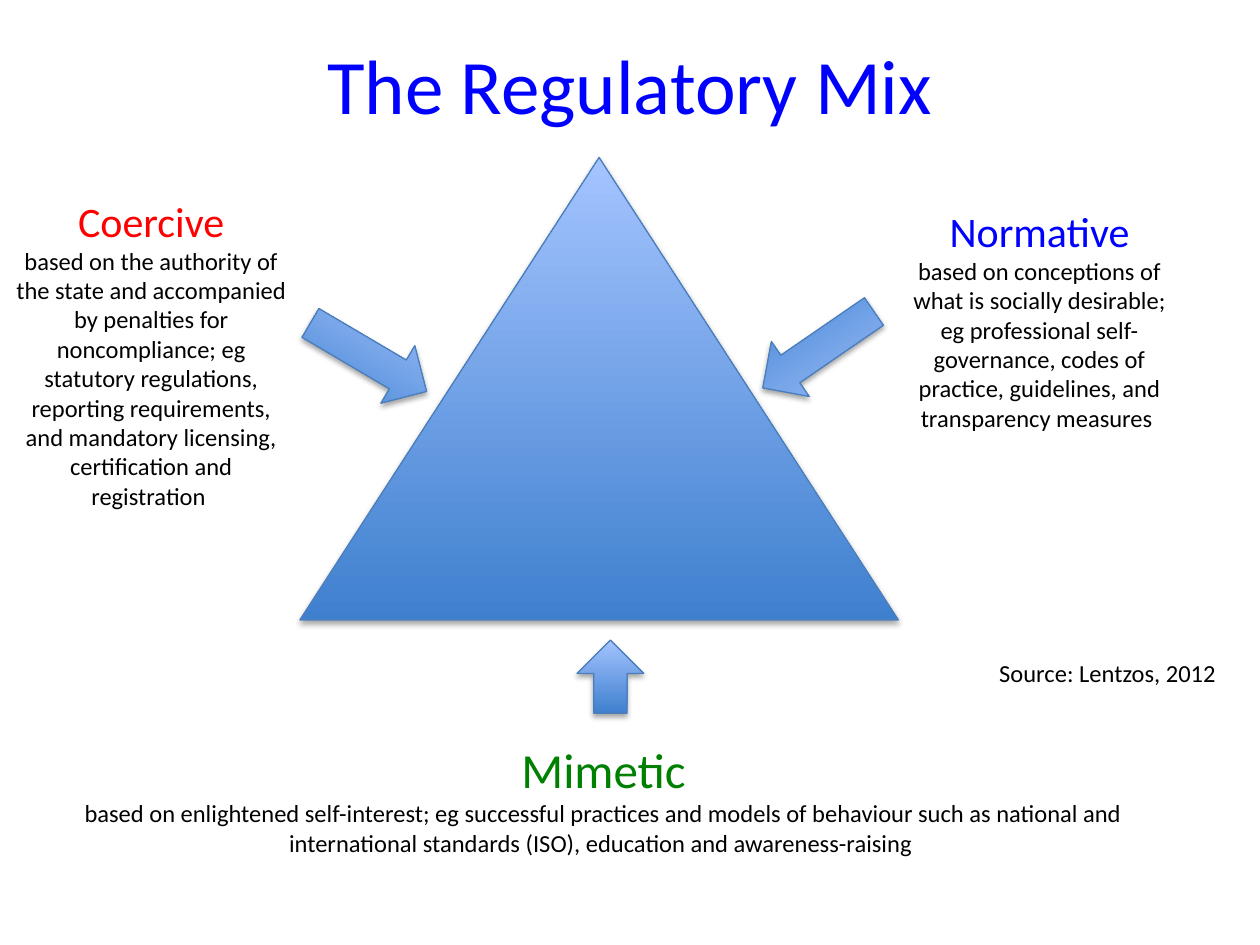
from dataclasses import dataclass

from lxml import etree
from pptx import Presentation
from pptx import util as u
from pptx.dml.color import RGBColor
from pptx.enum import shapes, text
from pptx.oxml.ns import qn

FONT = "Calibri"
BLACK = "000000"
BLUE = "0000FF"


@dataclass(frozen=True)
class Box:
    left: float
    top: float
    width: float
    height: float

    def lengths(self) -> list:
        return [u.Inches(n) for n in (self.left, self.top, self.width, self.height)]


@dataclass(frozen=True)
class Line:
    wording: str
    size: float = 14
    color: str = BLACK


@dataclass(frozen=True)
class Caption:
    box: Box
    lines: tuple[Line, ...]
    anchor: text.MSO_ANCHOR = text.MSO_ANCHOR.TOP


@dataclass(frozen=True)
class Block:
    preset: shapes.MSO_SHAPE
    box: Box
    rotation: float = 0


BLOCKS = (
    Block(shapes.MSO_SHAPE.ISOSCELES_TRIANGLE, Box(2.38, 1.25, 4.75, 3.67)),
    Block(shapes.MSO_SHAPE.RIGHT_ARROW, Box(2.39, 2.57, 1.07, 0.53), 30.5),
    Block(shapes.MSO_SHAPE.RIGHT_ARROW, Box(5.96, 2.51, 1.07, 0.53), 145.5),
    Block(shapes.MSO_SHAPE.UP_ARROW, Box(4.58, 5.08, 0.53, 0.58)),
)

CAPTIONS = (
    Caption(
        Box(0.5, 0.04, 9, 1.25),
        (Line("The Regulatory Mix", 44, BLUE),),
        text.MSO_ANCHOR.MIDDLE,
    ),
    Caption(
        Box(-0.01, 1.5, 2.42, 2.86),
        (
            Line("Coercive", 24, "FF0000"),
            Line(
                "based on the authority of the state and accompanied by penalties "
                "for noncompliance; eg statutory regulations, reporting requirements, "
                "and mandatory licensing, certification and registration "
            ),
        ),
    ),
    Caption(
        Box(0.5, 5.82, 8.58, 1.04),
        (
            Line("Mimetic", 28, "008000"),
            Line(
                "based on enlightened self-interest; eg successful practices and "
                "models of behaviour such as national and international standards "
                "(ISO), education and awareness-raising "
            ),
        ),
    ),
    Caption(
        Box(7.04, 1.58, 2.42, 1.92),
        (
            Line("Normative", 24, BLUE),
            Line(
                "based on conceptions of what is socially desirable; eg professional "
                "self-governance, codes of practice, guidelines, and transparency "
                "measures "
            ),
        ),
    ),
    Caption(Box(7.58, 5.17, 2.42, 0.34), (Line("Source: Lentzos, 2012"),)),
)


def rgb(code: str) -> RGBColor:
    return RGBColor.from_string(code)


def add_shadow(shape) -> None:
    shape.shadow.inherit = False
    effects = shape._element.spPr.find(qn("a:effectLst"))
    shadow = etree.SubElement(
        effects,
        qn("a:outerShdw"),
        blurRad=str(u.Pt(3.1)),
        dist=str(u.Pt(1.8)),
        dir="5400000",
        rotWithShape="0",
    )
    color = etree.SubElement(shadow, qn("a:srgbClr"), val=BLACK)
    etree.SubElement(color, qn("a:alpha"), val="35000")


def draw_block(slide, block: Block) -> None:
    shape = slide.shapes.add_shape(block.preset, *block.box.lengths())
    shape.rotation = block.rotation
    shape.fill.gradient()
    shape.fill.gradient_angle = 90
    for stop, position, code in zip(
        shape.fill.gradient_stops, (0, 1), ("3F80CE", "A4C4FF")
    ):
        stop.position = position
        stop.color.rgb = rgb(code)
    shape.line.color.rgb = rgb("4B7EBC")
    shape.line.width = u.Pt(0.75)
    add_shadow(shape)


def draw_caption(slide, caption: Caption) -> None:
    frame = slide.shapes.add_textbox(*caption.box.lengths()).text_frame
    frame.word_wrap = True
    frame.vertical_anchor = caption.anchor
    for index, line in enumerate(caption.lines):
        paragraph = frame.add_paragraph() if index else frame.paragraphs[0]
        paragraph.alignment = text.PP_ALIGN.CENTER
        run = paragraph.add_run()
        run.text = line.wording
        run.font.name = FONT
        run.font.size = u.Pt(line.size)
        run.font.color.rgb = rgb(line.color)


def main() -> None:
    deck = Presentation()
    deck.slide_width, deck.slide_height = u.Inches(10), u.Inches(7.5)
    slide = deck.slides.add_slide(deck.slide_layouts[6])
    for block in BLOCKS:
        draw_block(slide, block)
    for caption in CAPTIONS:
        draw_caption(slide, caption)
    deck.save("out.pptx")


if __name__ == "__main__":
    main()
